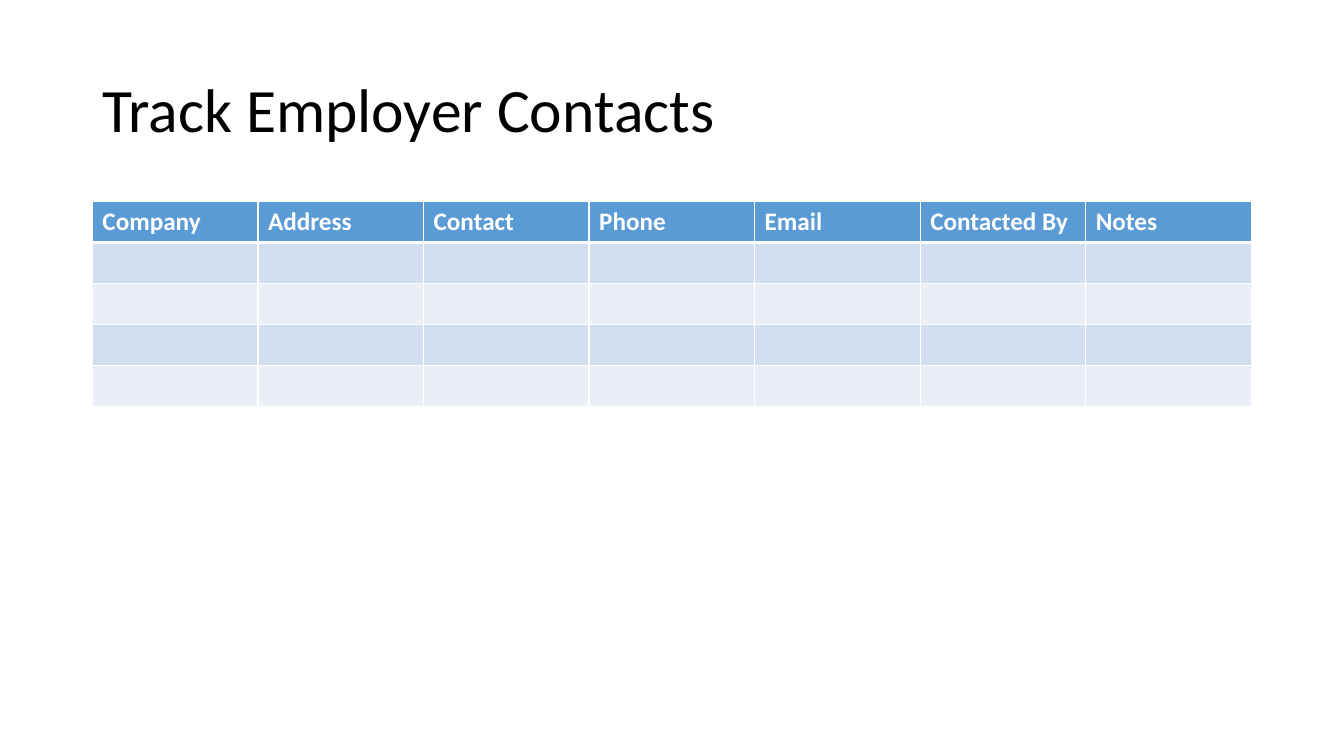
from lxml import etree
from pptx import Presentation
from pptx import util as u
from pptx.dml.color import RGBColor
from pptx.enum import text
from pptx.oxml.ns import qn

PX = 9525  # EMU per px, 96 px to the inch
FONT = "Calibri"
BLACK = RGBColor(0x00, 0x00, 0x00)
WHITE = RGBColor(0xFF, 0xFF, 0xFF)
HEADER_BLUE = RGBColor(0x5B, 0x9B, 0xD5)
BANDS = (RGBColor(0xD2, 0xDE, 0xEF), RGBColor(0xEA, 0xEF, 0xF7))

FIELDS = ("Company", "Address", "Contact", "Phone", "Email", "Contacted By", "Notes")
ENTRY_ROWS = 4


def px(length):
    return u.Emu(round(length * PX))


def style_font(paragraph, size, color, bold=False):
    font = paragraph.font
    font.name, font.size, font.bold = FONT, u.Pt(size), bold
    font.color.rgb = color


def set_borders(cell, top=1, bottom=1):
    """Draw white cell borders, with widths in points."""
    properties = cell._tc.get_or_add_tcPr()
    for side, width in (("L", 1), ("R", 1), ("T", top), ("B", bottom)):
        line = etree.SubElement(properties, qn(f"a:ln{side}"), w=str(u.Pt(width)))
        fill = etree.SubElement(line, qn("a:solidFill"))
        etree.SubElement(fill, qn("a:srgbClr"), val=str(WHITE))


def add_title(slide, left, top, width, height):
    frame = slide.shapes.add_textbox(px(left), px(top), px(width), px(height)).text_frame
    frame.word_wrap = True
    frame.vertical_anchor = text.MSO_ANCHOR.MIDDLE
    heading = frame.paragraphs[0]
    heading.text = "Track Employer Contacts"
    heading.line_spacing = 0.9
    style_font(heading, 44, BLACK)


def add_contact_log(slide, left, top, width, height):
    row_count = ENTRY_ROWS + 1
    log = slide.shapes.add_table(
        row_count, len(FIELDS), px(left), px(top), px(width), px(height)).table
    for column in log.columns:
        column.width = px(width / len(FIELDS))
    for row in log.rows:
        row.height = px(height / row_count)

    # Header row
    for index, field in enumerate(FIELDS):
        header = log.cell(0, index)
        set_borders(header, bottom=3)
        header.fill.solid()
        header.fill.fore_color.rgb = HEADER_BLUE
        label = header.text_frame.paragraphs[0]
        label.text = field
        style_font(label, 18, WHITE, bold=True)

    # Empty banded rows for entries
    for row in range(1, row_count):
        for index in range(len(FIELDS)):
            entry = log.cell(row, index)
            set_borders(entry, top=3 if row == 1 else 1)
            entry.fill.solid()
            entry.fill.fore_color.rgb = BANDS[(row - 1) % 2]


def main():
    deck = Presentation()
    deck.slide_width, deck.slide_height = px(1280), px(720)
    slide = deck.slides.add_slide(deck.slide_layouts[6])
    add_title(slide, 88, 38, 1104, 139)
    add_contact_log(slide, 88, 192, 1104, 195)
    deck.save("out.pptx")


if __name__ == "__main__":
    main()
